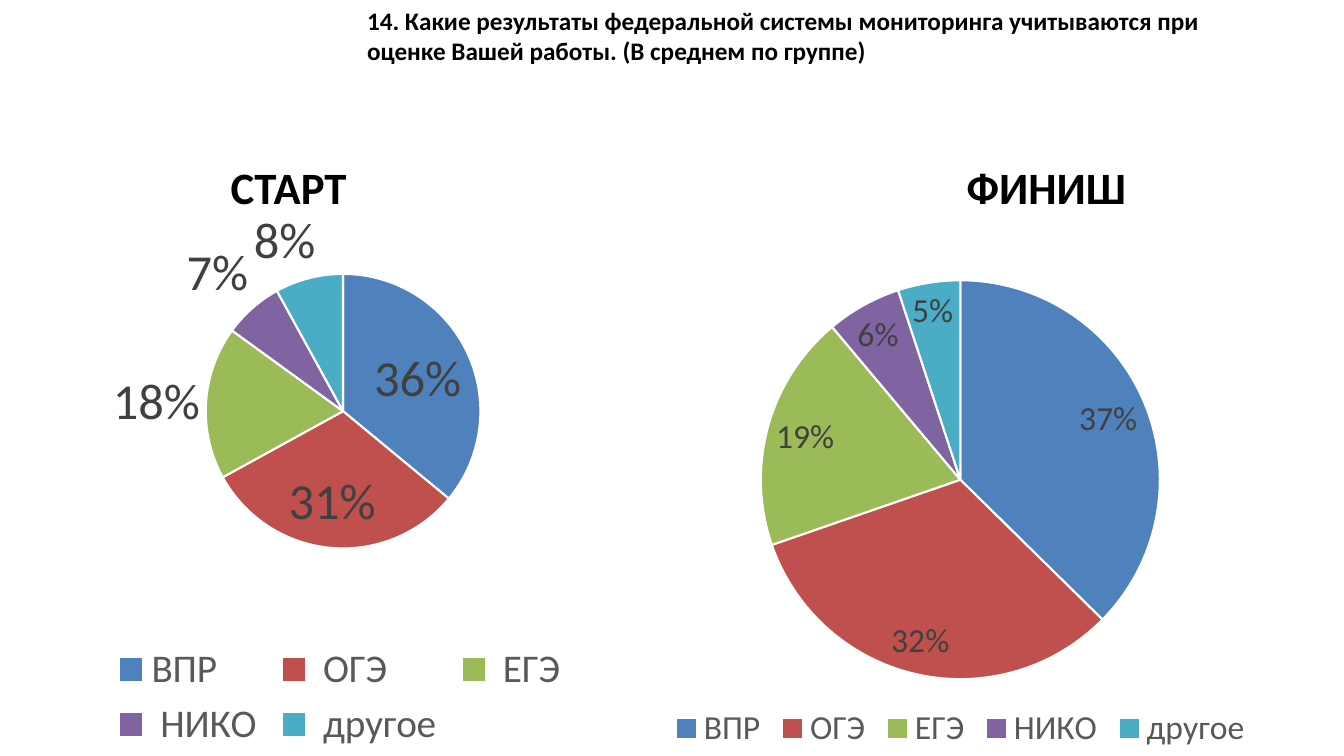
from lxml.etree import SubElement
from pptx import Presentation
from pptx.chart.data import CategoryChartData
from pptx.dml.color import RGBColor
from pptx.enum.chart import XL_CHART_TYPE, XL_LABEL_POSITION, XL_LEGEND_POSITION
from pptx.enum.text import MSO_ANCHOR, PP_ALIGN
from pptx.oxml.ns import qn
from pptx.util import Inches, Pt

WIDE, HIGH = Inches(13.33), Inches(7.5)
COL, ROW = WIDE / 100, HIGH / 100
HUES = ["4F81BD", "C0504D", "9BBB59", "8064A2", "4BACC6"]


def paint(code):
    return RGBColor.from_string(code)


def place(box):
    left, top, wide, high = box
    return int(left * COL), int(top * ROW), int(wide * COL), int(high * ROW)


def style(font, size, color, bold=False, name="Calibri"):
    font.name = name
    font.size = Pt(size)
    font.bold = bold
    font.color.rgb = paint(color)


def write(shape, text, size, color="000000", bold=True):
    frame = shape.text_frame
    frame.word_wrap = True
    frame.vertical_anchor = MSO_ANCHOR.TOP
    para = frame.paragraphs[0]
    para.alignment = PP_ALIGN.LEFT
    run = para.add_run()
    run.text = text
    style(run.font, size, color, bold)


def fix_plot(chart, area):
    plot = chart._chartSpace.chart.plotArea
    for old in plot.findall(qn("c:layout")):
        plot.remove(old)
    layout = plot.makeelement(qn("c:layout"), {})
    plot.insert(0, layout)
    manual = SubElement(layout, qn("c:manualLayout"))
    rules = [("layoutTarget", "inner"), ("xMode", "edge"), ("yMode", "edge")]
    for tag, val in rules + list(zip("xywh", area)):
        SubElement(manual, qn(f"c:{tag}")).set("val", str(val))


def add_pie(slide, box, names, vals, area, key_size, tag_size):
    data = CategoryChartData()
    data.categories = names
    data.add_series("Series 1", vals)
    chart = slide.shapes.add_chart(XL_CHART_TYPE.PIE, *place(box), data).chart
    style(chart.font, 10, "000000", name="Arial")
    chart.has_title = False
    chart.has_legend = True
    chart.legend.position = XL_LEGEND_POSITION.BOTTOM
    chart.legend.include_in_layout = False
    style(chart.legend.font, key_size, "595959")
    plot = chart.plots[0]
    plot.vary_by_categories = True
    plot.has_data_labels = True
    tags = plot.data_labels
    tags.show_value = False
    tags.show_percentage = True
    tags.number_format = "0%"
    tags.number_format_is_linked = False
    tags.position = XL_LABEL_POSITION.BEST_FIT
    style(tags.font, tag_size, "404040")
    for i, hue in enumerate(HUES):
        look = plot.series[0].points[i].format
        look.fill.solid()
        look.fill.fore_color.rgb = paint(hue)
        look.line.color.rgb = paint("FFFFFF")
        look.line.width = Pt(1.5)
    fix_plot(chart, area)


def add_panel(slide, box, head, inset, drop, **pie):
    left, top, wide, high = box
    label = slide.shapes.add_textbox(*place((left + inset, top, 17, 8.4)))
    write(label, head, 32)
    add_pie(slide, (left, top + drop, wide, high - drop), **pie)


def add_title(slide, box, text):
    title = slide.shapes.title
    title.left, title.top, title.width, title.height = place(box)
    write(title, text, 18)


def main():
    deck = Presentation()
    deck.slide_width, deck.slide_height = WIDE, HIGH
    slide = deck.slides.add_slide(deck.slide_layouts[5])
    add_title(slide, (26.56, 0, 64.44, 17.33),
              "14. Какие результаты федеральной системы мониторинга "
              "учитываются при оценке Вашей работы. (В среднем по группе)")
    add_panel(slide, (0, 20.53, 50.56, 79.47), "СТАРТ", 16.43, 5.33,
              names=["ВПР", " ОГЭ", " ЕГЭ", " НИКО", " другое"],
              vals=[36, 31, 18, 7, 8], area=(0.3, 0.14, 0.41, 0.49),
              key_size=28, tag_size=36)
    add_panel(slide, (42.91, 20.53, 57.09, 79.47), "ФИНИШ", 28.28, 8.53,
              names=["ВПР", "ОГЭ", "ЕГЭ", "НИКО", "другое"],
              vals=[37, 32, 19, 6, 5], area=(0.24, 0.11, 0.52, 0.75),
              key_size=24, tag_size=24)
    deck.save("out.pptx")


if __name__ == "__main__":
    main()
